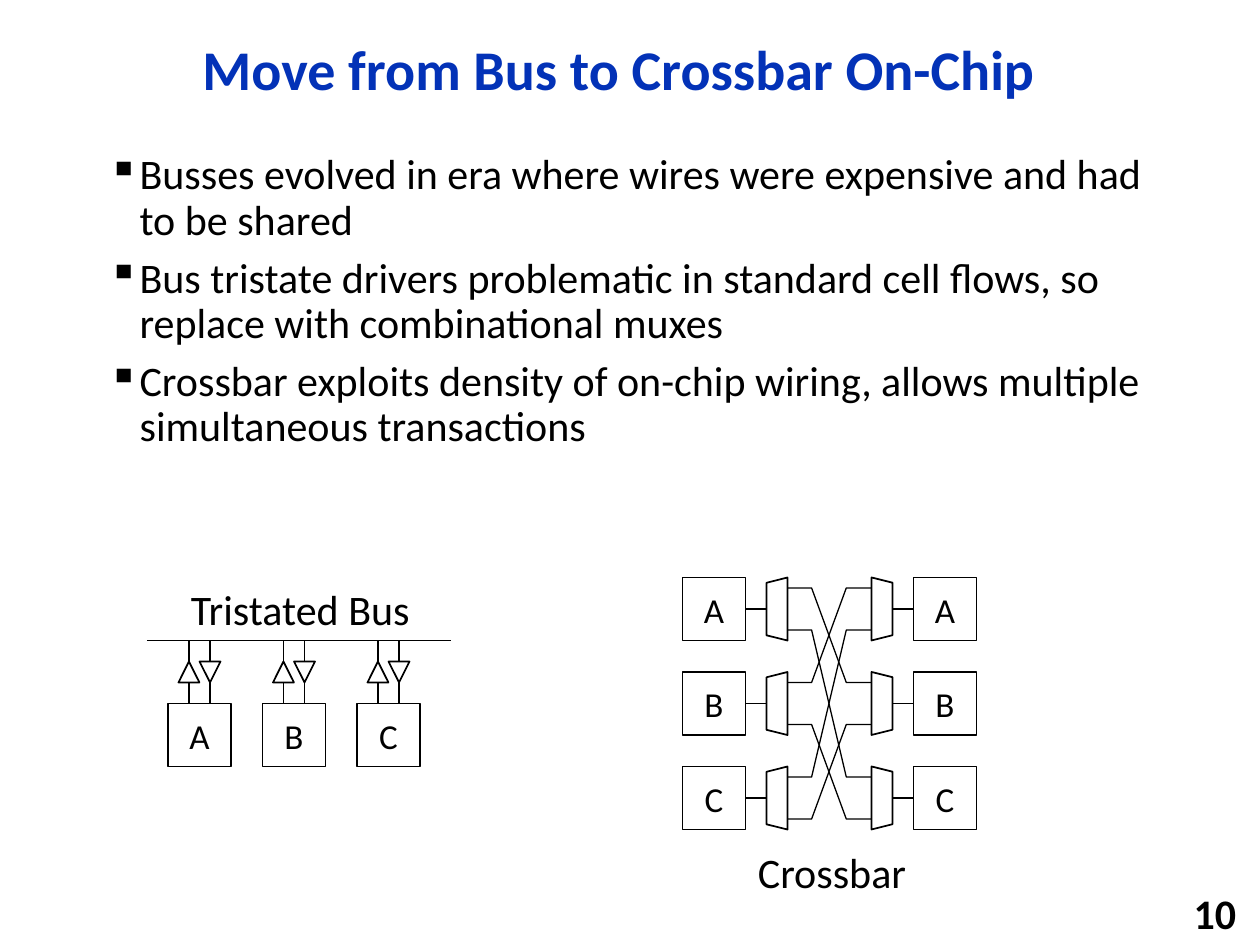
from lxml import etree
from pptx import Presentation
from pptx import util as u
from pptx.dml.color import RGBColor
from pptx.enum import shapes, text
from pptx.oxml.ns import qn

BLUE = RGBColor(0x03, 0x32, 0xB7)
BLACK = RGBColor(0, 0, 0)
WHITE = RGBColor(255, 255, 255)
FONT = "Calibri"
KIND = shapes.MSO_SHAPE
ALIGN = text.PP_ALIGN
MID = text.MSO_ANCHOR.MIDDLE

deck = Presentation()
deck.slide_width, deck.slide_height = u.Inches(10), u.Inches(7.5)
slide = deck.slides.add_slide(deck.slide_layouts[5])
items = slide.shapes
CELL = deck.slide_width / 120


def style(frame, size, color=BLACK, bold=False, align=None):
    for para in frame.paragraphs:
        para.alignment = align
        for run in para.runs:
            run.font.name, run.font.size = FONT, u.Pt(size)
            run.font.color.rgb, run.font.bold = color, bold


def draw(kind, col, row, wide, high, label="", turn=0):
    if kind == "line":
        item = items.add_connector(shapes.MSO_CONNECTOR.STRAIGHT, *[
            round(n * CELL) for n in (col, row, col + wide, row + high)])
        etree.SubElement(item._element.spPr, qn("a:effectLst"))
    else:
        item = items.add_shape(kind, *[round(n * CELL) for n in (col, row, wide, high)])
        item.shadow.inherit = False
        item.fill.solid()
        item.fill.fore_color.rgb = WHITE
        item.rotation = turn
    item.line.color.rgb, item.line.width = BLACK, u.Pt(1)
    if label:
        frame = item.text_frame
        frame.margin_left = frame.margin_right = frame.margin_top = frame.margin_bottom = 0
        frame.vertical_anchor = MID
        frame.text = label
        style(frame, 20, align=ALIGN.CENTER)
    return item


title = slide.shapes.title
title.left, title.top = u.Inches(0.92), u.Inches(0.17)
title.width, title.height = u.Inches(7.98), u.Inches(0.81)
title.text_frame.text = "Move from Bus to Crossbar On-Chip"
title.text_frame.vertical_anchor = MID
title.text_frame.paragraphs[0].line_spacing = 0.9
style(title.text_frame, 32, BLUE, True, ALIGN.CENTER)

body = items.add_textbox(u.Inches(0.76), u.Inches(1.17), u.Inches(8.4), u.Inches(2.6))
body.text_frame.word_wrap = True
body.text_frame.text = "\n".join([
    "Busses evolved in era where wires were expensive and had to be shared",
    "Bus tristate drivers problematic in standard cell flows, so replace with combinational muxes",
    "Crossbar exploits density of on-chip wiring, allows multiple simultaneous transactions",
])
style(body.text_frame, 24)
for para in body.text_frame.paragraphs:
    para.line_spacing, para.space_before = 0.9, u.Pt(7.2)
    props = para._p.get_or_add_pPr()
    props.set("marL", str(u.Inches(0.25)))
    props.set("indent", str(-u.Inches(0.25)))
    etree.SubElement(props, qn("a:buChar")).set("char", "▪")

for note, col, row, wide in [("Tristated Bus", 17, 55, 23.9), ("Crossbar", 71, 80, 16.7)]:
    box = items.add_textbox(*[round(n * CELL) for n in (col, row, wide, 6)])
    box.text_frame.word_wrap = False
    box.text_frame.text = note
    style(box.text_frame, 24)

page = items.add_textbox(u.Inches(7.83), u.Inches(7.08), u.Inches(2.08), u.Inches(0.32))
page.text_frame.word_wrap = True
page.text_frame.vertical_anchor = MID
page.text_frame.text = "10"
style(page.text_frame, 24, bold=True, align=ALIGN.RIGHT)

draw("line", 14, 61, 29, 0)
for step, name in enumerate("ABC"):
    left = 16 + 9 * step
    for lane, turn in enumerate((0, 180)):
        wire = left + 2 + 2 * lane
        draw(KIND.ISOSCELES_TRIANGLE, wire - 1, 63, 2, 2, turn=turn)
        for row in (61, 65):
            draw("line", wire, row, 0, 2)
    draw(KIND.RECTANGLE, left, 67, 6, 6, name)

    top = 55 + 9 * step
    for col, mux, turn, stub, side in [(65, 71, 270, 71, 3), (87, 81, 90, 87, 1)]:
        node = draw(KIND.RECTANGLE, col, top, 6, 6, name)
        draw(KIND.TRAPEZOID, mux, top + 2, 6, 2, turn=turn)
        link = draw("line", stub, top + 3, 2 if side == 3 else -2, 0)
        link.begin_connect(node, side)

ports = [56, 60, 65, 69, 74, 78]
for start, end in [(0, 2), (3, 5), (2, 0), (5, 3), (1, 4), (4, 1)]:
    a, b = ports[start], ports[end]
    pen = items.build_freeform(75, a, scale=CELL)
    pen = items.build_freeform(round(75 * CELL), round(a * CELL))
    pen.add_line_segments([(round(x * CELL), round(y * CELL)) for x, y in
                           [(77.3, a), (80.6, b), (83, b)]], close=False)
    wire = pen.convert_to_shape()
    wire.shadow.inherit = False
    wire.fill.background()
    wire.line.color.rgb, wire.line.width = BLACK, u.Pt(0.75)

deck.save("out.pptx")
